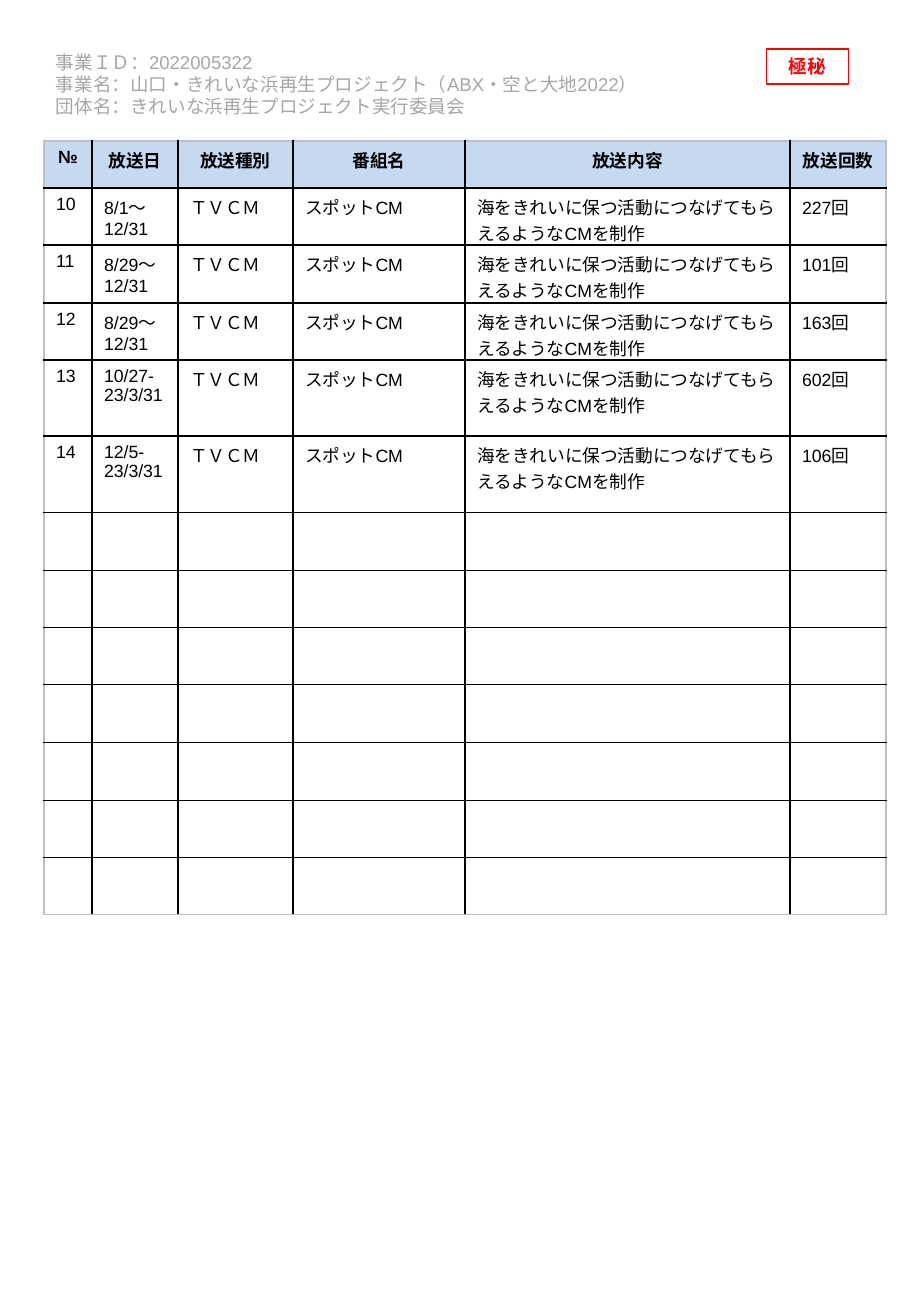
from itertools import pairwise

from lxml import etree
from pptx import Presentation
from pptx import util as u
from pptx.dml.color import RGBColor
from pptx.enum import shapes, text
from pptx.oxml import ns

PROJECT = "\n".join([
    "事業ＩＤ：2022005322",
    "事業名：山口・きれいな浜再生プロジェクト（ABX・空と大地2022）",
    "団体名：きれいな浜再生プロジェクト実行委員会",
])
STAMP = "極秘"
HEADINGS = ["№", "放送日", "放送種別", "番組名", "放送内容", "放送回数"]
KIND, PROGRAM = "ＴＶＣＭ", "スポットCM"
CONTENT = "海をきれいに保つ活動につなげてもらえるようなCMを制作"
BROADCASTS = [
    ("10", "8/1～12/31", "227回"),
    ("11", "8/29～12/31", "101回"),
    ("12", "8/29～12/31", "163回"),
    ("13", "10/27-23/3/31", "602回"),
    ("14", "12/5-23/3/31", "106回"),
]
COLUMN_EDGES = [44, 92, 178, 293, 465, 790, 886]
ROW_EDGES = [141, 188, 245, 303, 360, 436, 512, 570, 627, 684, 742, 800, 857, 914]
COLORS = {"header": "C6D9F1", "ink": "000000", "edge": "BFBFBF",
          "project": "A6A6A6", "stamp": "FF0000"}
EMU_PER_PX = 7530


def px(length):
    return u.Emu(length * EMU_PER_PX)


def color(name):
    return RGBColor.from_string(COLORS[name])


def write(frame, words, size=10.5, font="Arial", asian_font=None, ink="ink",
          bold=False, align=text.PP_ALIGN.LEFT):
    para = frame.paragraphs[0]
    para.text = words
    para.alignment = align
    for span in para.runs:
        span.font.size = u.Pt(size)
        span.font.name = font
        span.font.bold = bold
        span.font.color.rgb = color(ink)
        if asian_font:
            etree.SubElement(span.font._element, ns.qn("a:ea"), typeface=asian_font)


def draw_border(side, name):
    line = etree.Element(ns.qn(f"a:{side}"), w=str(u.Pt(1)))
    fill = etree.SubElement(line, ns.qn("a:solidFill"))
    etree.SubElement(fill, ns.qn("a:srgbClr"), val=COLORS[name])
    return line


def add_borders(cell, outer):
    """Put the four lines ahead of the fill, grey on the table's outer sides."""
    properties = cell._tc.get_or_add_tcPr()
    for place, side in enumerate(["lnL", "lnR", "lnT", "lnB"]):
        name = "edge" if side in outer else "ink"
        properties.insert(place, draw_border(side, name))


def add_project(page):
    box = page.shapes.add_textbox(px(44), px(36), px(823), px(96))
    frame = box.text_frame
    frame.word_wrap = True
    frame.vertical_anchor = text.MSO_ANCHOR.MIDDLE
    write(frame, PROJECT, size=11, asian_font="Arial", ink="project")


def add_stamp(page):
    box = page.shapes.add_shape(shapes.MSO_SHAPE.RECTANGLE,
                                px(766), px(49), px(82), px(35))
    box.shadow.inherit = False
    box.fill.background()
    box.line.color.rgb = color("stamp")
    box.line.width = u.Pt(0.75)
    box.text_frame.vertical_anchor = text.MSO_ANCHOR.MIDDLE
    write(box.text_frame, STAMP, size=11, font="Calibri", ink="stamp",
          bold=True, align=text.PP_ALIGN.CENTER)


def add_schedule(page):
    widths = [end - start for start, end in pairwise(COLUMN_EDGES)]
    heights = [end - start for start, end in pairwise(ROW_EDGES)]
    rows = [HEADINGS] + [(number, date, KIND, PROGRAM, CONTENT, count)
                         for number, date, count in BROADCASTS]
    table = page.shapes.add_table(len(heights), len(widths),
                                  px(COLUMN_EDGES[0]), px(ROW_EDGES[0]),
                                  px(sum(widths)), px(sum(heights))).table
    table.first_row = table.horz_banding = False
    for column, width in zip(table.columns, widths):
        column.width = px(width)
    for r, height in enumerate(heights):
        table.rows[r].height = px(height)
        for c in range(len(widths)):
            cell = table.cell(r, c)
            cell.margin_top, cell.margin_bottom = px(6), 0
            if r == 0:
                cell.fill.solid()
                cell.fill.fore_color.rgb = color("header")
            else:
                cell.fill.background()
            sides = {"lnL": c == 0, "lnR": c == len(widths) - 1,
                     "lnT": r == 0, "lnB": r == len(heights) - 1}
            add_borders(cell, [side for side, is_outer in sides.items() if is_outer])
            if r < len(rows):
                align = text.PP_ALIGN.CENTER if r == 0 else text.PP_ALIGN.LEFT
                write(cell.text_frame, rows[r][c], bold=r == 0, align=align)


def main():
    deck = Presentation()
    deck.slide_width, deck.slide_height = u.Inches(7.5), u.Inches(10.83)
    page = deck.slides.add_slide(deck.slide_layouts[6])
    add_project(page)
    add_stamp(page)
    add_schedule(page)
    deck.save("out.pptx")


if __name__ == "__main__":
    main()
